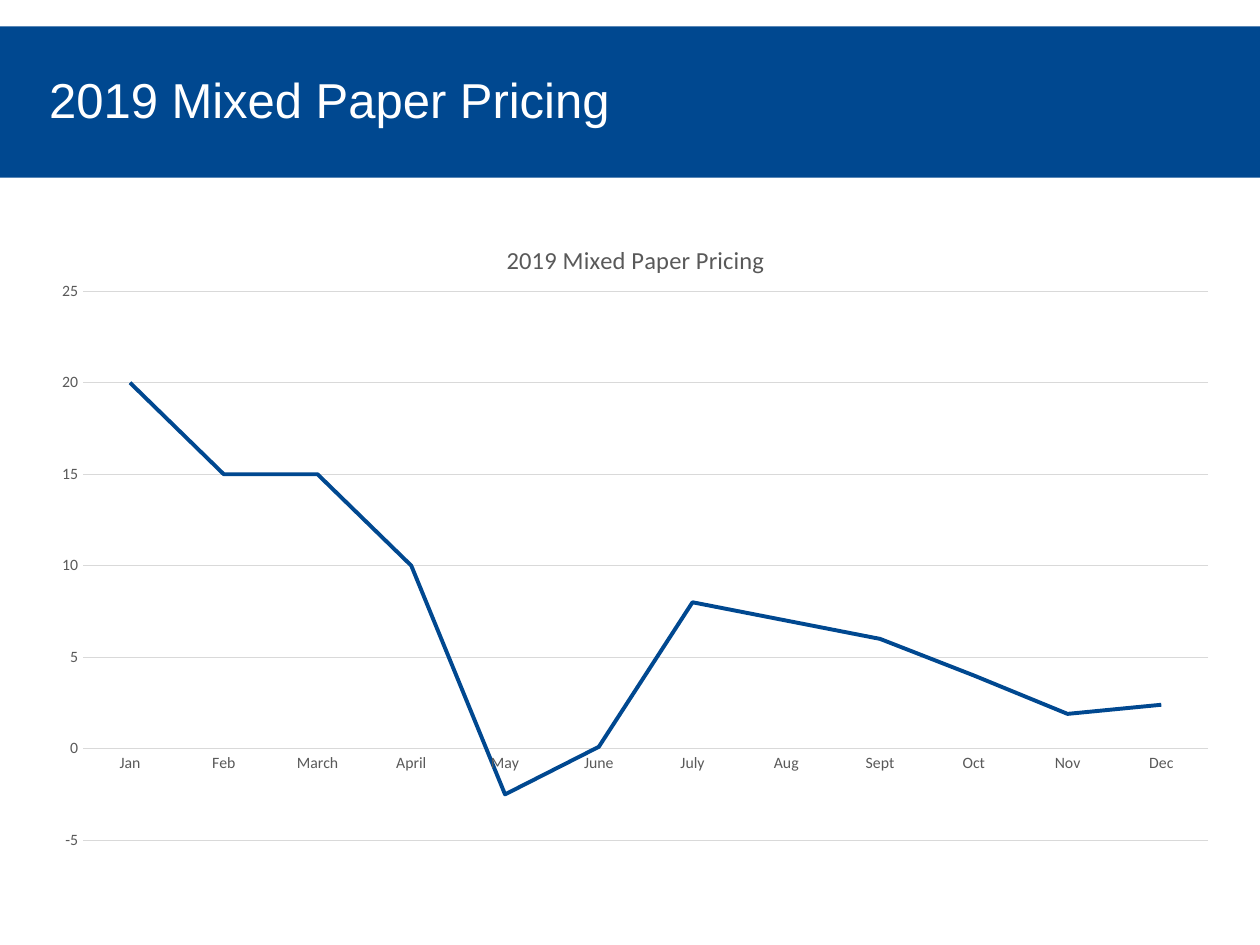
"""Build the 2019 mixed paper pricing slide with a banner and a line chart."""
from pptx import Presentation, util as u
from pptx.chart.data import CategoryChartData
from pptx.dml.color import RGBColor
from pptx.enum import chart as charts, shapes, text
from pptx.oxml import parse_xml
from pptx.oxml.ns import nsdecls

BLUE, GRID, GREY, WHITE = "004890", "D9D9D9", "595959", "FFFFFF"
HEADING = "2019 Mixed Paper Pricing"
PRICES = {"Jan": 20, "Feb": 15, "March": 15, "April": 10, "May": -2.5, "June": 0.1,
          "July": 8, "Aug": 7, "Sept": 6, "Oct": 4, "Nov": 1.9, "Dec": 2.4}


def style_font(font, name, size, color):
    font.name, font.size, font.bold = name, u.Pt(size), False
    font.color.rgb = RGBColor.from_string(color)


def manual_layout(target, **shares):
    modes = "".join(f'<c:{axis}Mode val="edge"/>' for axis in "xy")
    sizes = "".join(f'<c:{key} val="{share}"/>' for key, share in shares.items())
    inner = '<c:layoutTarget val="inner"/>' if "w" in shares else ""
    return parse_xml(f'<c:layout {nsdecls("c")}><c:manualLayout>{inner}{modes}{sizes}'
                     "</c:manualLayout></c:layout>") if target is None else target


deck = Presentation()
deck.slide_width, deck.slide_height = u.Inches(10), u.Inches(7.5)
page = deck.slides.add_slide(deck.slide_layouts[5])

banner = page.shapes.add_shape(shapes.MSO_SHAPE.RECTANGLE, 0, u.Inches(0.21),
                               deck.slide_width, u.Inches(1.2))
banner.shadow.inherit = False
banner.fill.solid()
banner.fill.fore_color.rgb = RGBColor.from_string(BLUE)
banner.line.fill.background()

title = page.shapes.title
banner._element.addnext(title._element)
title.left, title.top = u.Inches(0.29), u.Inches(0.29)
title.width, title.height = u.Inches(7.76), u.Inches(1.05)
title.text_frame.text = HEADING
title.text_frame.vertical_anchor = text.MSO_ANCHOR.MIDDLE
para = title.text_frame.paragraphs[0]
para.alignment, para.line_spacing = text.PP_ALIGN.LEFT, 0.9
style_font(para.runs[0].font, "Arial", 28, WHITE)

data = CategoryChartData()
data.categories = list(PRICES)
data.add_series("Series 1", list(PRICES.values()))
chart = page.shapes.add_chart(charts.XL_CHART_TYPE.LINE, u.Inches(0.28), u.Inches(1.63),
                              u.Inches(9.5), u.Inches(5.25), data).chart
style_font(chart.font, "Calibri", 10, "000000")
chart.has_legend = False
chart.has_title = True
chart.chart_title.text_frame.text = HEADING
style_font(chart.chart_title.text_frame.paragraphs[0].runs[0].font, "Calibri", 14, GREY)
chart.chart_title.include_in_layout = False

plot = chart.plots[0]
plot.vary_by_categories = False
line = plot.series[0]
line.smooth = False
line.marker.style = charts.XL_MARKER_STYLE.NONE
line.format.line.width = u.Pt(2.25)
line.format.line.color.rgb = RGBColor.from_string(BLUE)

months, prices = chart.category_axis, chart.value_axis
for axis in (months, prices):
    axis.major_tick_mark = axis.minor_tick_mark = charts.XL_TICK_MARK.NONE
    style_font(axis.tick_labels.font, "Calibri", 9, GREY)
prices.minimum_scale, prices.maximum_scale, prices.major_unit = -5, 25, 5
prices.format.line.fill.background()
for rule in (months.format.line, prices.major_gridlines.format.line):
    rule.width = u.Pt(0.75)
    rule.color.rgb = RGBColor.from_string(GRID)

area = chart._chartSpace.chart.plotArea
for old in area.findall("{*}layout"):
    area.remove(old)
area.insert(0, manual_layout(None, x=0.04, y=0.13, w=0.94, h=0.83))
heading = chart.chart_title._element
for old in heading.findall("{*}layout"):
    heading.remove(old)
heading.find("{*}tx").addnext(manual_layout(None, x=0.39, y=0.05))

deck.save("out.pptx")
